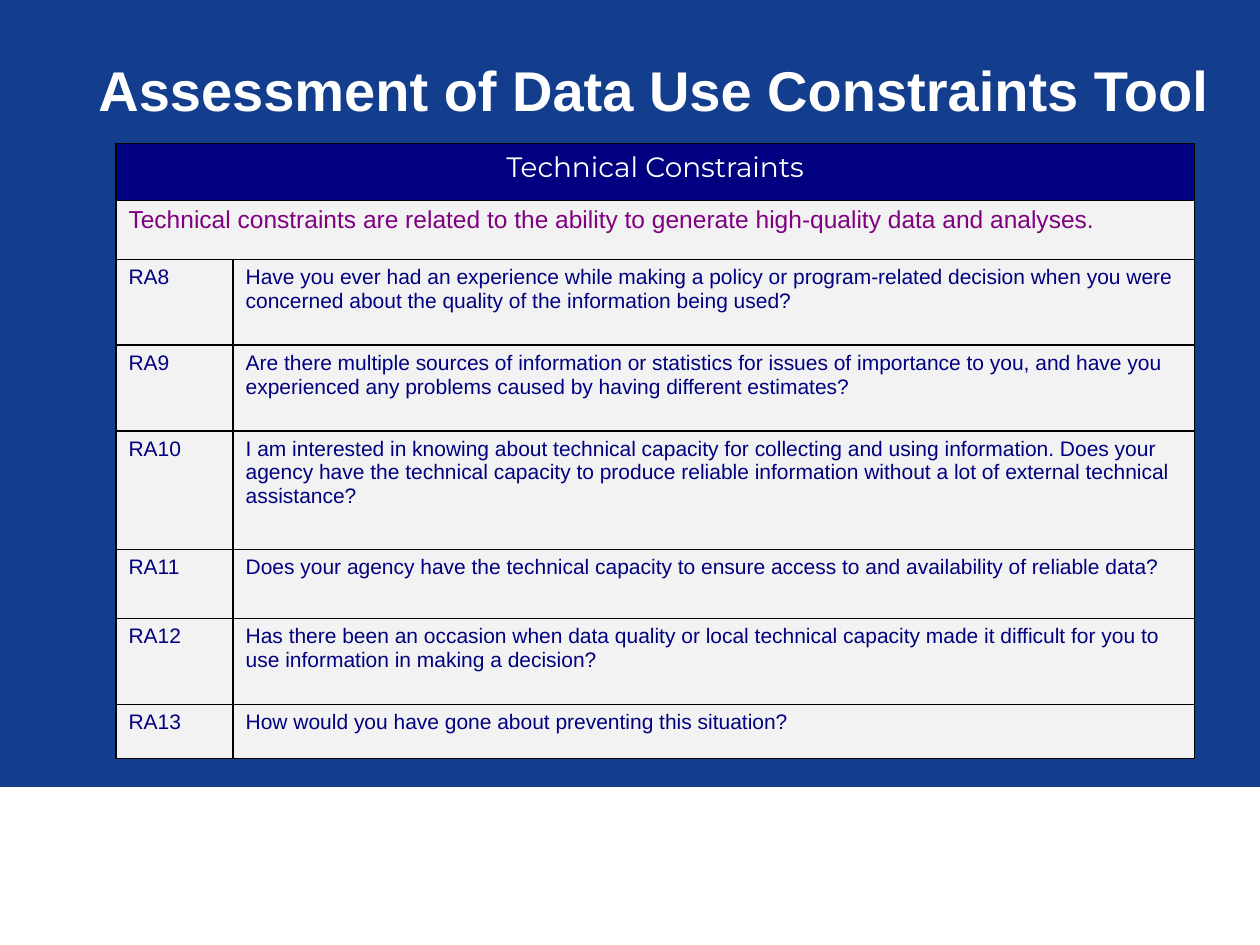
"""Build the technical constraints slide of the data use assessment tool."""
from dataclasses import dataclass

import lxml.etree
import pptx
import pptx.dml.color
import pptx.enum.shapes
import pptx.enum.text
import pptx.oxml.ns
import pptx.slide
import pptx.table
import pptx.util

Inches = pptx.util.Inches
RGBColor = pptx.dml.color.RGBColor
Align = pptx.enum.text.PP_ALIGN

BLUE = RGBColor(0x13, 0x3D, 0x8D)
NAVY = RGBColor(0x00, 0x00, 0x80)
PURPLE = RGBColor(0x80, 0x00, 0x80)
PALE = RGBColor(0xF2, 0xF2, 0xF2)
WHITE = RGBColor(0xFF, 0xFF, 0xFF)
BLACK = RGBColor(0x00, 0x00, 0x00)


@dataclass(frozen=True)
class TextStyle:
    size: int
    color: RGBColor
    font: str = "Arial"
    bold: bool = False
    align: Align = Align.LEFT


@dataclass(frozen=True)
class Question:
    code: str
    wording: str
    height: float


TITLE = TextStyle(32, WHITE, bold=True, align=Align.CENTER)
HEADING = TextStyle(16, WHITE, font="Montserrat", align=Align.CENTER)
SUMMARY = TextStyle(14, PURPLE)
BODY = TextStyle(12, NAVY)

HEADING_HEIGHT = 0.45
SUMMARY_HEIGHT = 0.47
COLUMN_WIDTHS = (0.93, 7.63)
QUESTIONS = (
    Question("RA8", "Have you ever had an experience while making a policy or "
             "program-related decision when you were concerned about the quality "
             "of the information being used?", 0.68),
    Question("RA9", "Are there multiple sources of information or statistics for "
             "issues of importance to you, and have you experienced any problems "
             "caused by having different estimates?", 0.68),
    Question("RA10", "I am interested in knowing about technical capacity for "
             "collecting and using information. Does your agency have the technical "
             "capacity to produce reliable information without a lot of external "
             "technical assistance?", 0.94),
    Question("RA11", "Does your agency have the technical capacity to ensure access "
             "to and availability of reliable data?", 0.55),
    Question("RA12", "Has there been an occasion when data quality or local technical "
             "capacity made it difficult for you to use information in making a "
             "decision?", 0.68),
    Question("RA13", "How would you have gone about preventing this situation?", 0.43),
)


def write(frame: pptx.text.text.TextFrame, wording: str, style: TextStyle) -> None:
    """Fill a text frame with one styled paragraph."""
    frame.text = wording
    paragraph = frame.paragraphs[0]
    paragraph.alignment = style.align
    font = paragraph.runs[0].font
    font.name = style.font
    font.size = pptx.util.Pt(style.size)
    font.bold = style.bold
    font.color.rgb = style.color


def format_cell(cell: pptx.table._Cell, fill: RGBColor) -> None:
    """Give a cell black borders and a solid fill."""
    qn = pptx.oxml.ns.qn
    properties = cell._tc.get_or_add_tcPr()
    for side in ("a:lnL", "a:lnR", "a:lnT", "a:lnB"):
        border = lxml.etree.SubElement(properties, qn(side), w=str(pptx.util.Pt(1)))
        solid = lxml.etree.SubElement(border, qn("a:solidFill"))
        lxml.etree.SubElement(solid, qn("a:srgbClr"), val=str(BLACK))
    cell.fill.solid()
    cell.fill.fore_color.rgb = fill


def add_footer_band(slide: pptx.slide.Slide) -> None:
    """Add the white band along the bottom edge."""
    band = slide.shapes.add_shape(
        pptx.enum.shapes.MSO_SHAPE.RECTANGLE,
        Inches(0), Inches(6.25), Inches(10), Inches(1.25))
    band.shadow.inherit = False
    band.fill.solid()
    band.fill.fore_color.rgb = WHITE
    band.line.color.rgb = WHITE
    band.line.width = pptx.util.Pt(0.75)


def add_title(slide: pptx.slide.Slide, wording: str) -> None:
    """Place and format the slide title."""
    title = slide.shapes.title
    title.left, title.top = Inches(0.62), Inches(0.3)
    title.width, title.height = Inches(9.14), Inches(0.82)
    title.text_frame.auto_size = pptx.enum.text.MSO_AUTO_SIZE.NONE
    title.text_frame.vertical_anchor = pptx.enum.text.MSO_ANCHOR.MIDDLE
    write(title.text_frame, wording, TITLE)


def add_constraints_table(slide: pptx.slide.Slide) -> None:
    """Add the heading, the summary and one row for each question."""
    heights = [HEADING_HEIGHT, SUMMARY_HEIGHT, *(q.height for q in QUESTIONS)]
    table = slide.shapes.add_table(
        len(heights), len(COLUMN_WIDTHS), Inches(0.92), Inches(1.14),
        Inches(sum(COLUMN_WIDTHS)), Inches(sum(heights))).table
    table.first_row = False
    table.horz_banding = False
    for column, width in zip(table.columns, COLUMN_WIDTHS):
        column.width = Inches(width)
    for index, (row, height) in enumerate(zip(table.rows, heights)):
        row.height = Inches(height)
        for cell in row.cells:
            format_cell(cell, NAVY if index == 0 else PALE)

    for index in range(2):
        table.cell(index, 0).merge(table.cell(index, 1))
    write(table.cell(0, 0).text_frame, "Technical Constraints", HEADING)
    write(table.cell(1, 0).text_frame,
          "Technical constraints are related to the ability to generate "
          "high-quality data and analyses.", SUMMARY)
    for index, question in enumerate(QUESTIONS, start=2):
        write(table.cell(index, 0).text_frame, question.code, BODY)
        write(table.cell(index, 1).text_frame, question.wording, BODY)


def main() -> None:
    """Assemble and save the presentation."""
    presentation = pptx.Presentation()
    presentation.slide_width = Inches(10)
    presentation.slide_height = Inches(7.5)
    slide = presentation.slides.add_slide(presentation.slide_layouts[5])
    slide.background.fill.solid()
    slide.background.fill.fore_color.rgb = BLUE
    add_footer_band(slide)
    add_title(slide, "Assessment of Data Use Constraints Tool")
    add_constraints_table(slide)
    presentation.save("out.pptx")


if __name__ == "__main__":
    main()
